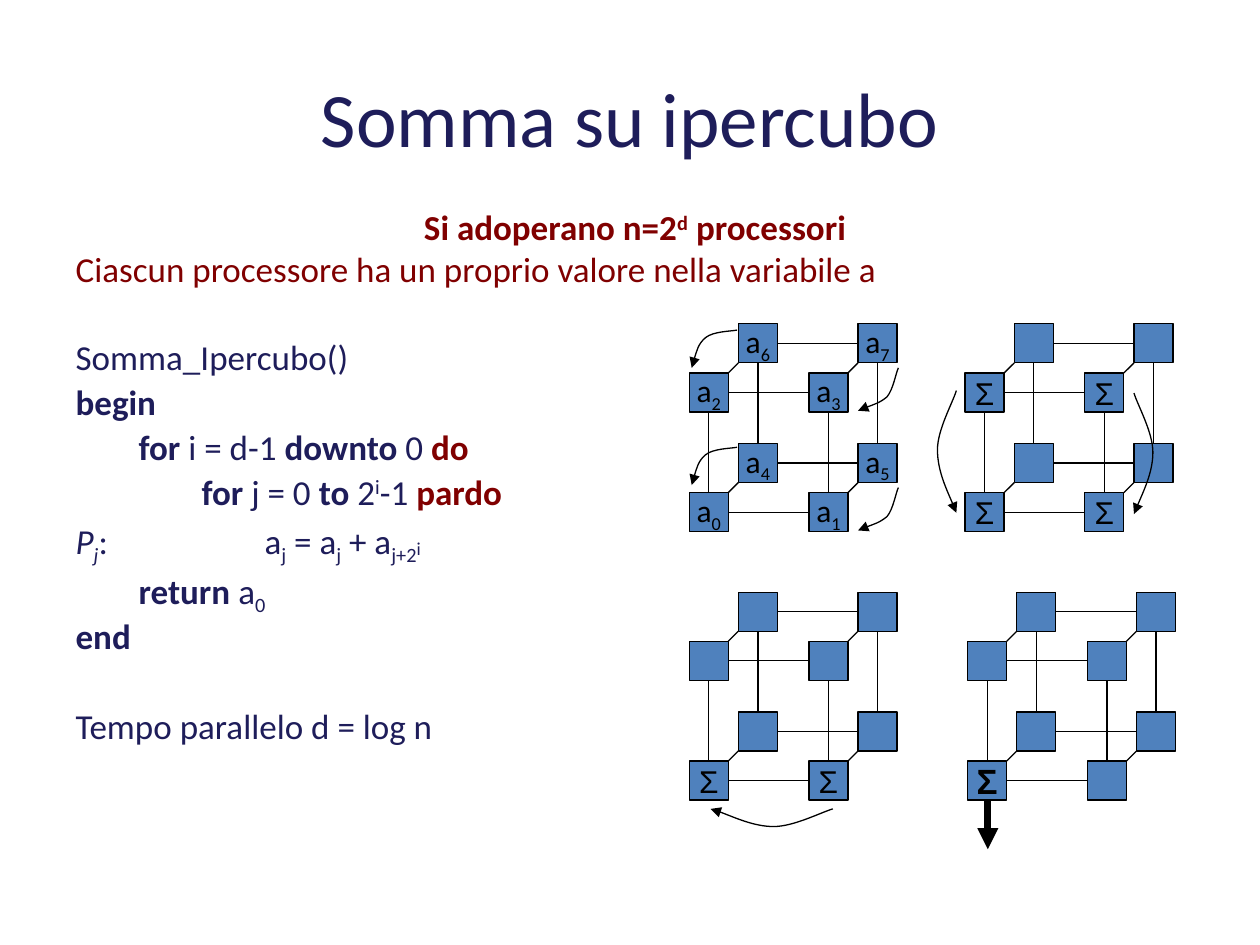
from lxml import etree
from pptx import Presentation
from pptx import util as u
from pptx.dml import color
from pptx.enum import shapes, text
from pptx.oxml import ns

NAVY, MAROON, BLUE, BLACK = "1E1D5A", "800000", "4F81BD", "000000"
NODE, STEP, DEPTH = 0.31, 0.95, 0.39
BASELINES = {"^": "30000", "_": "-25000", "~": "-5000"}

PSEUDOCODE = [
    (4, NAVY, [("begin", "b")]),
    (4, NAVY, [("\tfor", "b"), (" i = d-1 ", ""), ("downto", "b"), (" 0 ", ""), ("do", "br")]),
    (4, NAVY, [("\t\t", ""), ("for", "b"), (" j = 0 ", ""), ("to", "b"), (" 2", ""),
               ("i", "^"), ("-1 ", ""), ("pardo", "br")]),
    (4, NAVY, [("P", "i"), ("j", "i_"), (":\t\t\ta", ""), ("j", "_"), (" = a", ""),
               ("j", "_"), (" + a", ""), ("j+2", "_"), ("i", "~")]),
    (4, NAVY, [("\t", ""), ("return", "b"), (" a", ""), ("0", "_")]),
    (4, NAVY, [("end", "b")]),
]
BLANK_LINE = 29.5
PROCESSORS = (4, MAROON, [("Si adoperano n=2", "b"), ("d", "b^"), (" processori", "b")])
VALUES = (4, MAROON, [("Ciascun processore ha un proprio valore nella variabile a", "")])
HEADER = (BLANK_LINE, NAVY, [("Somma_Ipercubo()", "")])
COST = (BLANK_LINE, NAVY, [("Tempo parallelo d = log n", "")])

TO_LEFT = [(0.02, 0.35), (0.03, 0.31), (0.07, 0.16), (0.13, 0.11), (0.19, 0.06), (0.33, 0.06), (0.38, 0.05)]
TO_FRONT = [(1.34, 0.69), (1.38, 0.67), (1.51, 0.63), (1.57, 0.58), (1.62, 0.52), (1.64, 0.39), (1.66, 0.35)]
DOWN_LEFT = [(-0.07, 1.5), (-0.1, 1.42), (-0.22, 1.17), (-0.22, 1), (-0.22, 0.84), (-0.1, 0.63), (-0.07, 0.53)]
DOWN_RIGHT = [(1.34, 1.51), (1.37, 1.43), (1.49, 1.18), (1.49, 1.02), (1.49, 0.86), (1.37, 0.65), (1.34, 0.55)]
ALONG_BASE = [(0.17, 1.72), (0.25, 1.74), (0.51, 1.86), (0.67, 1.86), (0.83, 1.86), (1.04, 1.75), (1.14, 1.72)]


def rgb(value):
    """Return the colour for a hex string."""
    return color.RGBColor.from_string(value)


def shifted(curve, dy):
    """Return the curve moved down by dy."""
    return [(x, y + dy) for x, y in curve]


def add_run(paragraph, wording, style, size, hue, font="Calibri"):
    """Add one run; style letters are b, i, r (maroon) and a baseline mark."""
    run = paragraph.add_run()
    run.text = wording
    run.font.name, run.font.size = font, u.Pt(18 if "~" in style else size)
    run.font.bold, run.font.italic = "b" in style, "i" in style
    run.font.color.rgb = rgb(MAROON if "r" in style else hue)
    for mark, baseline in BASELINES.items():
        if mark in style:
            run.font._element.set("baseline", baseline)


def place(part, left, top, width, height):
    """Move a part to a box given in inches."""
    part.left, part.top = u.Inches(left), u.Inches(top)
    part.width, part.height = u.Inches(width), u.Inches(height)


def add_title(slide, box):
    """Fill the title placeholder."""
    title = slide.shapes.title
    place(title, *box)
    title.text_frame.vertical_anchor = text.MSO_ANCHOR.MIDDLE
    paragraph = title.text_frame.paragraphs[0]
    paragraph.alignment = text.PP_ALIGN.CENTER
    add_run(paragraph, "Somma su ipercubo", "", 44, NAVY)


def add_algorithm(slide, box):
    """Fill the body placeholder with the statement and the pseudocode."""
    body = slide.placeholders[1]
    place(body, *box)
    frame = body.text_frame
    frame.auto_size = text.MSO_AUTO_SIZE.NONE
    for index, (gap, hue, runs) in enumerate([PROCESSORS, VALUES, HEADER, *PSEUDOCODE, COST]):
        paragraph = frame.add_paragraph() if index else frame.paragraphs[0]
        paragraph.alignment = text.PP_ALIGN.LEFT if index else text.PP_ALIGN.CENTER
        paragraph.line_spacing = 0.8 if index == 1 else 0.9
        paragraph.space_before = u.Pt(gap)
        properties = paragraph._p.get_or_add_pPr()
        for name, value in (("marL", 0), ("indent", 0), ("defTabSz", u.Inches(0.5))):
            properties.set(name, str(int(value)))
        etree.SubElement(properties, ns.qn("a:buNone"))
        tabs = etree.SubElement(properties, ns.qn("a:tabLst"))
        for stop in (0.5, 1, 1.5):
            etree.SubElement(tabs, ns.qn("a:tab"), pos=str(int(u.Inches(stop))), algn="l")
        for wording, style in runs:
            add_run(paragraph, wording, style, 20, hue)


def style_line(part, width=0.75, arrow=None):
    """Draw a black outline, with an arrowhead at headEnd or tailEnd if named."""
    part.line.color.rgb = rgb(BLACK)
    part.line.width = u.Pt(width)
    if arrow:
        etree.SubElement(part.line._get_or_add_ln(), ns.qn("a:" + arrow), type="triangle")


def add_edge(container, start, end, width=0.75, arrow=None):
    """Add a straight line between two points."""
    edge = container.add_connector(shapes.MSO_CONNECTOR.STRAIGHT, *(u.Inches(v) for v in (*start, *end)))
    style_line(edge, width, arrow)
    etree.SubElement(edge._element.spPr, ns.qn("a:effectLst"))


def add_node(container, left, top, runs):
    """Add one processor square with its label."""
    node = container.add_shape(shapes.MSO_SHAPE.RECTANGLE, *(u.Inches(v) for v in (left, top, NODE, NODE)))
    node.shadow.inherit = False
    node.fill.solid()
    node.fill.fore_color.rgb = rgb(BLUE)
    style_line(node)
    if not runs:
        return
    frame = node.text_frame
    frame.word_wrap = False
    frame.vertical_anchor = text.MSO_ANCHOR.MIDDLE
    paragraph = frame.paragraphs[0]
    paragraph.alignment = text.PP_ALIGN.CENTER
    for wording, style, size, font in runs:
        add_run(paragraph, wording, style, size, BLACK, font)


def add_curve(container, points):
    """Add a Bézier curve with an arrowhead at its first point."""
    start, *controls = [(u.Inches(x), u.Inches(y)) for x, y in points]
    builder = container.build_freeform(*start)
    builder.add_line_segments(controls, close=False)
    curve = builder.convert_to_shape()
    curve.shadow.inherit = False
    curve.fill.background()
    style_line(curve, arrow="headEnd")
    outline = next(curve._element.iter(ns.qn("a:path")))
    segments = outline.findall(ns.qn("a:lnTo"))
    for first in range(0, len(segments), 3):
        bezier = etree.SubElement(outline, ns.qn("a:cubicBezTo"))
        for segment in segments[first:first + 3]:
            bezier.append(segment[0])
            outline.remove(segment)


def add_hypercube(slide, box, labels, curves):
    """Add a cube of eight processors; index bits mean right, top and back."""
    left, top = box
    cube = slide.shapes.add_group_shape().shapes
    corners = [(left + STEP * (n & 1) + DEPTH * (n >> 2),
                top + STEP * (1 - (n >> 1 & 1)) + DEPTH * (1 - (n >> 2))) for n in range(8)]
    for face in (0, 4):
        for n in range(face, face + 4):
            add_node(cube, *corners[n], labels.get(n))
        for n in (face, face + 2):
            x, y = corners[n]
            add_edge(cube, (x + NODE, y + NODE / 2), (x + STEP, y + NODE / 2))
        for n in (face + 2, face + 3):
            x, y = corners[n]
            add_edge(cube, (x + NODE / 2, y + NODE), (x + NODE / 2, y + STEP))
    for (x, y), (back_x, back_y) in zip(corners[:4], corners[4:]):
        add_edge(cube, (x + NODE, y), (back_x, back_y + NODE))
    for curve in curves:
        add_curve(cube, [(left + x, top + y) for x, y in curve])


def main():
    """Build the slide and save it."""
    deck = Presentation()
    deck.slide_width, deck.slide_height = u.Inches(10), u.Inches(7.5)
    slide = deck.slides.add_slide(deck.slide_layouts[1])
    add_algorithm(slide, (0.5, 1.62, 9.08, 5.12))
    add_title(slide, (0.5, 0.3, 9, 1.25))
    values = {n: [("a", "", 18, "Calibri"), (str(n), "_", 18, "Calibri")] for n in range(8)}
    partial = [("Σ", "", 18, "Arial")]
    total = [("Σ", "b", 20, "Arial")]
    add_hypercube(slide, (7.66, 2.57), dict.fromkeys(range(4), partial), [DOWN_LEFT, DOWN_RIGHT])
    add_hypercube(slide, (5.47, 2.57), values,
                  [TO_LEFT, shifted(TO_LEFT, 0.93), TO_FRONT, shifted(TO_FRONT, 0.95)])
    add_hypercube(slide, (7.68, 4.7), {0: total}, [])
    add_hypercube(slide, (5.47, 4.7), dict.fromkeys(range(2), partial), [ALONG_BASE])
    add_edge(slide.shapes, (7.84, 6.35), (7.84, 6.74), 4, "tailEnd")
    deck.save("out.pptx")


if __name__ == "__main__":
    main()
